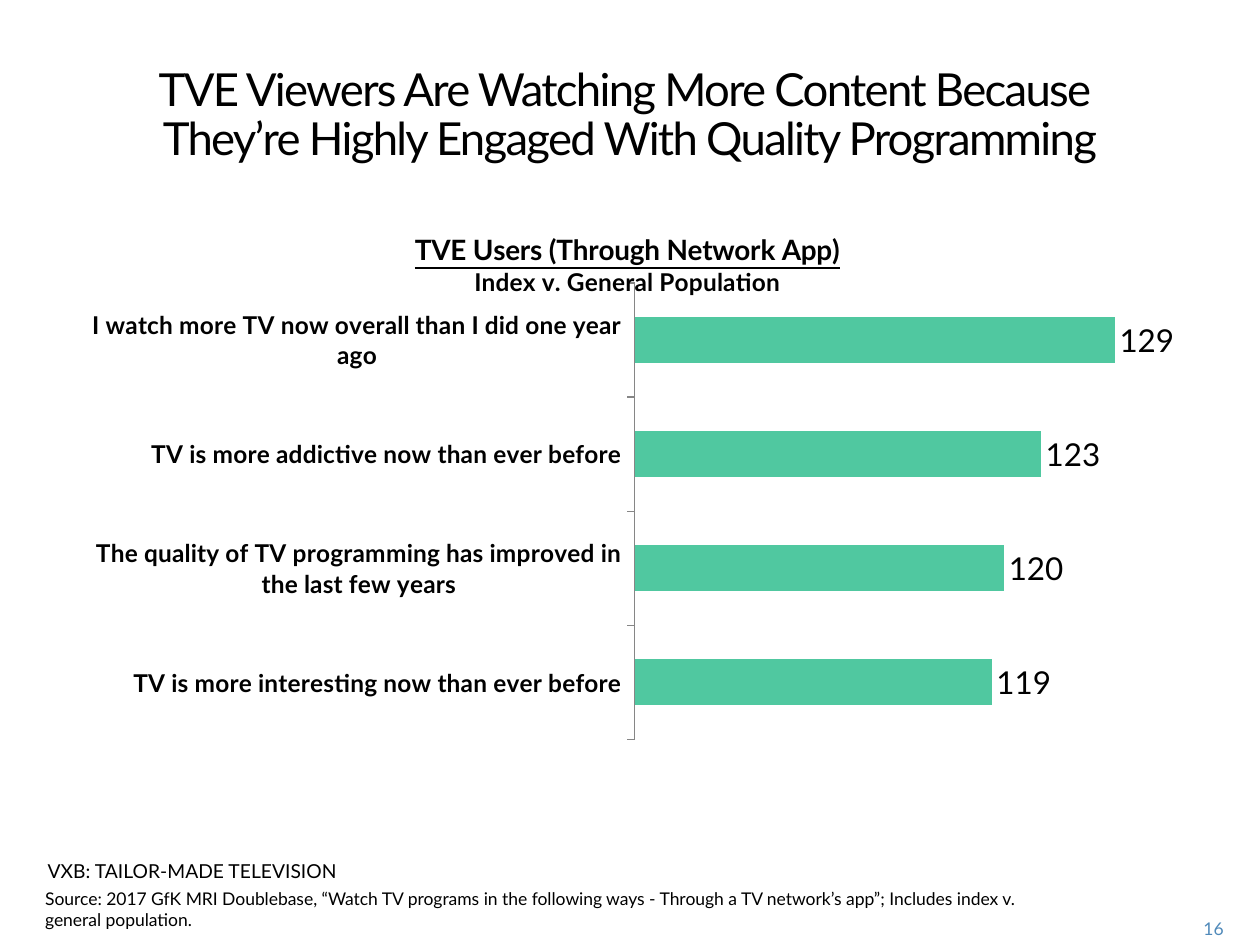
from lxml import etree
from pptx import Presentation
from pptx.chart.data import CategoryChartData
from pptx.dml.color import RGBColor
from pptx.enum.chart import XL_CHART_TYPE, XL_LABEL_POSITION, XL_TICK_LABEL_POSITION, XL_TICK_MARK
from pptx.enum.text import MSO_ANCHOR, PP_ALIGN
from pptx.oxml.ns import qn
from pptx.util import Inches, Pt

FONT = "Lato"
BLACK, GREEN, BLUE, GREY = "000000", "50C8A0", "508ABA", "868686"
WIDTH, HEIGHT = 10, 7.5


def color(value):
    return RGBColor.from_string(value)


def set_font(font, size, fill=BLACK, bold=False):
    font.name = FONT
    font.size = Pt(size)
    font.bold = bold
    font.color.rgb = color(fill)


def place(sp, box):
    sp.left, sp.top, sp.width, sp.height = map(Inches, box)


def add_title(s, box, lines):
    sp = s.shapes.title
    place(sp, box)
    tf = sp.text_frame
    tf.word_wrap = True
    tf.vertical_anchor = MSO_ANCHOR.MIDDLE
    for i, line in enumerate(lines):
        p = tf.add_paragraph() if i else tf.paragraphs[0]
        p.alignment = PP_ALIGN.CENTER
        p.line_spacing = Pt(28)
        r = p.add_run()
        r.text = line
        set_font(r.font, 26)
        r.font._element.set("spc", "-100")


def add_note(s, box, text, size, fill=BLACK, align=PP_ALIGN.LEFT, anchor=MSO_ANCHOR.TOP):
    tf = s.shapes.add_textbox(*map(Inches, box)).text_frame
    tf.word_wrap = True
    tf.vertical_anchor = anchor
    p = tf.paragraphs[0]
    p.alignment = align
    r = p.add_run()
    r.text = text
    set_font(r.font, size, fill)


def set_layout(parent, after, inner=False, **shares):
    """Fix the place of a chart part, in shares of the chart's size."""
    for old in parent.findall(qn("c:layout")):
        parent.remove(old)
    layout = etree.Element(qn("c:layout"))
    manual = etree.SubElement(layout, qn("c:manualLayout"))
    settings = {"layoutTarget": "inner"} if inner else {}
    settings.update(xMode="edge", yMode="edge", **shares)
    for tag, value in settings.items():
        etree.SubElement(manual, qn(f"c:{tag}")).set("val", str(value))
    if after is None:
        parent.insert(0, layout)
    else:
        after.addnext(layout)


def add_chart_title(chart):
    chart.has_title = True
    title = chart.chart_title
    title.include_in_layout = False
    tf = title.text_frame
    lines = [("TVE Users (Through Network App)", 16, True),
             ("Index v. General Population", 14, False)]
    for i, (text, size, underline) in enumerate(lines):
        p = tf.add_paragraph() if i else tf.paragraphs[0]
        p.alignment = PP_ALIGN.CENTER
        r = p.add_run()
        r.text = text
        set_font(r.font, size, bold=True)
        r.font.underline = underline
    element = title._element
    set_layout(element, element.find(qn("c:tx")), x=0.3, y=0.05)


def add_index_chart(s, box, values):
    data = CategoryChartData()
    data.categories = list(values)
    data.add_series("Series 1", list(values.values()))
    chart = s.shapes.add_chart(XL_CHART_TYPE.BAR_CLUSTERED, *map(Inches, box), data).chart
    set_font(chart.font, 18)
    chart.has_legend = False
    add_chart_title(chart)

    # Axes
    axis = chart.category_axis
    axis.major_tick_mark = XL_TICK_MARK.OUTSIDE
    axis.tick_label_position = XL_TICK_LABEL_POSITION.LOW
    axis.format.line.color.rgb = color(GREY)
    set_font(axis.tick_labels.font, 14, bold=True)
    scale = chart.value_axis
    scale.minimum_scale, scale.maximum_scale = 90, 130
    scale.has_major_gridlines = False
    scale.visible = False

    # Bars and their values
    plot = chart.plots[0]
    plot.gap_width = 150
    plot.vary_by_categories = False
    series = plot.series[0]
    series.format.fill.solid()
    series.format.fill.fore_color.rgb = color(GREEN)
    labels = series.data_labels
    labels.show_value = True
    labels.position = XL_LABEL_POSITION.OUTSIDE_END
    set_font(labels.font, 18)
    area = chart._chartSpace.find(f".//{qn('c:plotArea')}")
    set_layout(area, None, inner=True, x=0.506, y=0.15, w=0.454, h=0.816)


def main():
    prs = Presentation()
    prs.slide_width, prs.slide_height = Inches(WIDTH), Inches(HEIGHT)
    s = prs.slides.add_slide(prs.slide_layouts[5])

    # Heading
    add_title(s, (0.04 * WIDTH, 0.46, 0.92 * WIDTH, 0.92),
              ["TVE Viewers Are Watching More Content Because ",
               "They’re Highly Engaged With Quality Programming"])

    # Index chart, lowest bar first
    add_index_chart(s, (0.68, 1.58, WIDTH - 2 * 0.68, 4.44), {
        "TV is more interesting now than ever before": 119,
        "The quality of TV programming has improved in the last few years": 120,
        "TV is more addictive now than ever before": 123,
        "I watch more TV now overall than I did one year ago": 129,
    })

    # Footer
    add_note(s, (0.28, 6.77, 3.08, 0.47), "VXB: TAILOR-MADE TELEVISION", 11)
    add_note(s, (0.26, 7, 7.91, 0.44),
             "Source: 2017 GfK MRI Doublebase, “Watch TV programs in the following ways - "
             "Through a TV network’s app”; Includes index v. general population.", 10)
    add_note(s, (9.2, 7.24, 0.61, 0.25), "16", 10, BLUE, PP_ALIGN.RIGHT, MSO_ANCHOR.MIDDLE)

    prs.save("out.pptx")


if __name__ == "__main__":
    main()
